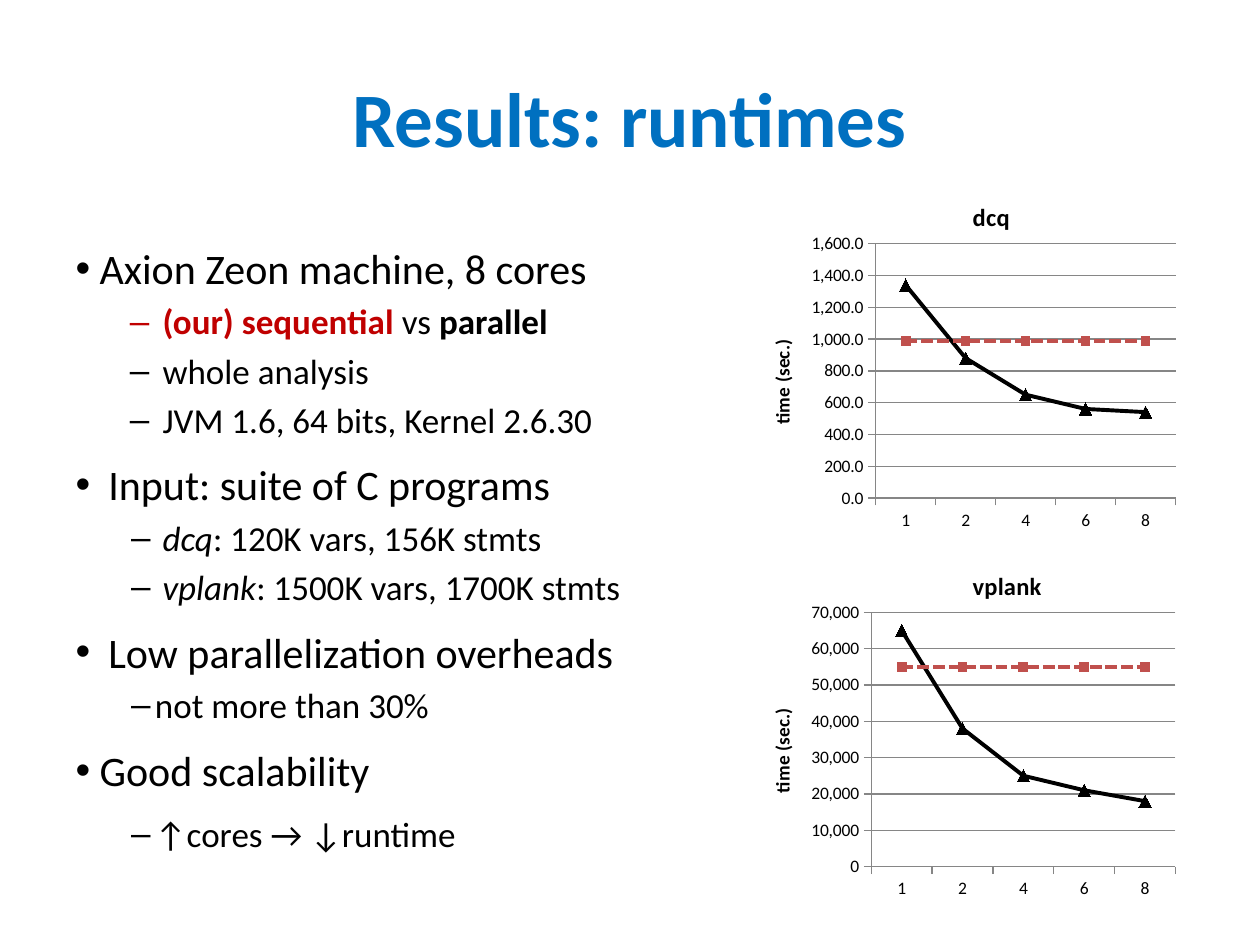
from lxml import etree
from pptx import Presentation
from pptx import util as u
from pptx.chart.data import CategoryChartData
from pptx.dml.color import RGBColor
from pptx.enum import chart as ch
from pptx.enum import dml, text

COLORS = {"title": "0070C0", "text": "000000", "accent": "C00000",
          "parallel": "000000", "sequential": "C0504D", "grid": "868686"}
FONT = "Calibri"
C_NS = "http://schemas.openxmlformats.org/drawingml/2006/chart"

BULLETS = [
    (0, 0.19, 0.19, 0, [("Axion Zeon machine, 8 cores", "")]),
    (1, 0.69, 0.26, 0, [("(our) sequential ", "ba"), ("vs ", ""), ("parallel", "b")]),
    (1, 0.69, 0.26, 0, [("whole analysis", "")]),
    (1, 0.69, 0.26, 6, [("JVM 1.6, 64 bits, Kernel 2.6.30", "")]),
    (0, 0.26, 0.26, 0, [("Input: suite of C programs", "")]),
    (1, 0.69, 0.25, 0, [("dcq", "i"), (": 120K vars, 156K stmts", "")]),
    (1, 0.69, 0.25, 6, [("vplank", "i"), (": 1500K vars, 1700K stmts", "")]),
    (0, 0.26, 0.26, 0, [("Low parallelization overheads", "")]),
    (1, 0.63, 0.19, 6, [("not more than 30%", "")]),
    (0, 0.19, 0.19, 6, [("Good scalability", "")]),
    (1, 0.63, 0.19, 6, [("↑cores → ↓runtime", "")]),
]
CORES = ["1", "2", "4", "6", "8"]
CHARTS = [
    ("dcq", [1340, 880, 650, 560, 540], 990, 1600, 200, "#,##0.0", 0.3),
    ("vplank", [65000, 38000, 25000, 21000, 18000], 55000, 70000, 10000, "#,##0", 0.29),
]


def rgb(name):
    return RGBColor.from_string(COLORS[name])


def share(prs, x, y, w, h):
    return (int(prs.slide_width * x), int(prs.slide_height * y),
            int(prs.slide_width * w), int(prs.slide_height * h))


def place(sp, box):
    sp.left, sp.top, sp.width, sp.height = box


def style(font, size, color="text", bold=False):
    font.name, font.size, font.bold = FONT, u.Pt(size), bold
    font.color.rgb = rgb(color)


def add_title(s, box):
    sp = s.shapes.title
    place(sp, box)
    tf = sp.text_frame
    tf.text = "Results: runtimes"
    tf.vertical_anchor = text.MSO_ANCHOR.MIDDLE
    tf.paragraphs[0].alignment = text.PP_ALIGN.CENTER
    style(tf.paragraphs[0].font, 44, "title", True)


def add_bullets(s, box):
    sp = s.placeholders[1]
    place(sp, box)
    tf = sp.text_frame
    tf.auto_size = text.MSO_AUTO_SIZE.NONE
    for i, (level, margin, hang, after, runs) in enumerate(BULLETS):
        p = tf.paragraphs[0] if i == 0 else tf.add_paragraph()
        p.level = level
        p.space_after = u.Pt(after)
        pPr = p._p.get_or_add_pPr()
        pPr.set("marL", str(u.Inches(margin)))
        pPr.set("indent", str(-u.Inches(hang)))
        p.font.name, p.font.size = FONT, u.Pt(20 if level else 24)
        for words, marks in runs:
            r = p.add_run()
            r.text = words
            r.font.bold, r.font.italic = "b" in marks, "i" in marks
            r.font.color.rgb = rgb("accent" if "a" in marks else "text")


def set_layout(parent, index, **values):
    layout = parent.find(f"{{{C_NS}}}layout")
    if layout is None:
        layout = etree.Element(f"{{{C_NS}}}layout")
        parent.insert(index, layout)
    manual = etree.SubElement(layout, f"{{{C_NS}}}manualLayout")
    for key, value in values.items():
        etree.SubElement(manual, f"{{{C_NS}}}{key}").set("val", str(value))


def set_heading(title, words, size, x, y):
    title.text_frame.text = words
    style(title.text_frame.paragraphs[0].font, size, bold=True)
    set_layout(title._element, 1, xMode="edge", yMode="edge", x=x, y=y)


def style_series(series, color, marker, size):
    series.smooth = False
    series.format.line.width = u.Pt(2.25)
    series.format.line.color.rgb = rgb(color)
    series.marker.style, series.marker.size = marker, size
    for part in (series.marker.format.fill, series.marker.format.line.fill):
        part.solid()
        part.fore_color.rgb = rgb(color)


def add_runtime_chart(s, box, name, parallel, sequential, top, step, fmt, left):
    data = CategoryChartData()
    data.categories = CORES
    data.add_series("Series 1", parallel)
    data.add_series("Series 2", [sequential] * len(CORES))
    chart = s.shapes.add_chart(ch.XL_CHART_TYPE.LINE_MARKERS, *box, data).chart
    style(chart.font, 10)
    chart.has_legend = False
    set_heading(chart.chart_title, name, 14, 0.51, 0.07)

    val, cat = chart.value_axis, chart.category_axis
    val.minimum_scale, val.maximum_scale, val.major_unit = 0, top, step
    val.tick_labels.number_format = fmt
    val.tick_labels.number_format_is_linked = False
    val.has_major_gridlines = True
    set_heading(val.axis_title, "time (sec.)", 11, 0.05, 0.45)
    for part in (val, cat, val.major_gridlines):
        part.format.line.color.rgb = rgb("grid")
    for axis in (val, cat):
        axis.major_tick_mark = ch.XL_TICK_MARK.OUTSIDE

    plot = chart.plots[0]
    plot.vary_by_categories = False
    style_series(plot.series[0], "parallel", ch.XL_MARKER_STYLE.TRIANGLE, 7)
    style_series(plot.series[1], "sequential", ch.XL_MARKER_STYLE.SQUARE, 5)
    plot.series[1].format.line.dash_style = dml.MSO_LINE.SQUARE_DOT
    set_layout(chart._chartSpace.chart.plotArea, 0, layoutTarget="inner",
               xMode="edge", yMode="edge", x=left, y=0.2,
               w=round(0.98 - left, 2), h=0.69)


def main():
    prs = Presentation()
    prs.slide_width, prs.slide_height = u.Inches(10), u.Inches(7.5)
    s = prs.slides.add_slide(prs.slide_layouts[1])
    add_title(s, share(prs, 0.05, 0.04, 0.9, 1 / 6))
    add_bullets(s, share(prs, 0.05, 0.25, 0.48, 0.66))
    for row, spec in enumerate(CHARTS):
        add_runtime_chart(s, share(prs, 0.59, 0.18 + 0.39 * row, 0.35, 0.39), *spec)
    prs.save("out.pptx")


if __name__ == "__main__":
    main()
